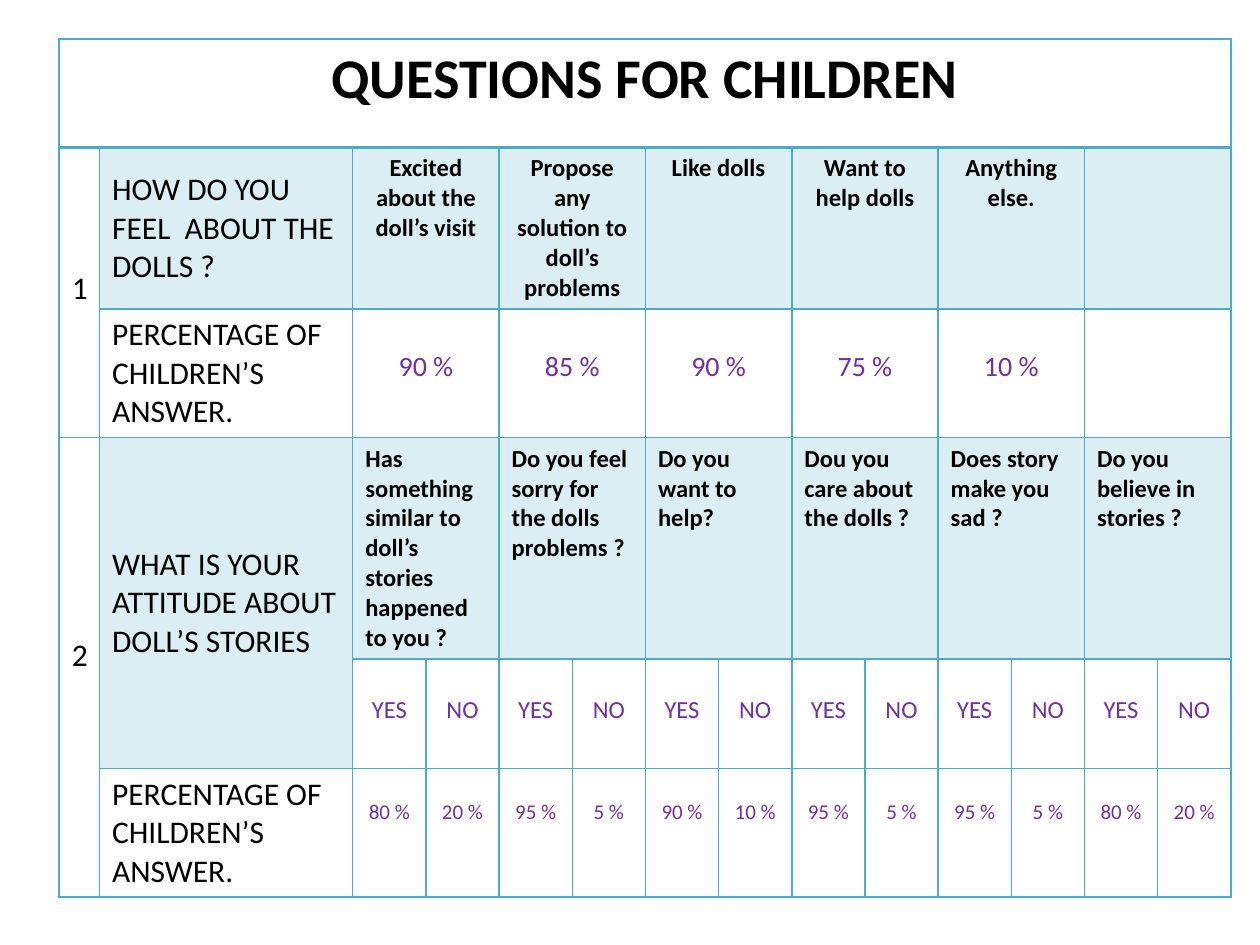
from dataclasses import dataclass

import pptx
import pptx.dml.color
import pptx.enum.text
import pptx.oxml
import pptx.oxml.ns
import pptx.util
from pptx.util import Inches

RGB = pptx.dml.color.RGBColor.from_string
CENTER = pptx.enum.text.PP_ALIGN.CENTER
LEFT = pptx.enum.text.PP_ALIGN.LEFT
TOP = pptx.enum.text.MSO_ANCHOR.TOP
MIDDLE = pptx.enum.text.MSO_ANCHOR.MIDDLE


@dataclass(frozen=True)
class Theme:
    font: str = "Calibri"
    ink: str = "000000"
    answer: str = "7030A0"
    border: str = "4BACC6"
    band: str = "DBEEF4"
    title_size: int = 32
    label_size: int = 18
    answer_size: int = 16
    option_size: int = 14
    share_size: int = 12
    line: float = 1
    heavy_line: float = 2


THEME = Theme()

PERCENTAGE_LABEL = "PERCENTAGE OF CHILDREN’S ANSWER."
FEELINGS = [
    ("Excited about the doll’s visit", "90 %"),
    ("Propose any solution to doll’s problems", "85 %"),
    ("Like dolls", "90 %"),
    ("Want to help dolls", "75 %"),
    ("Anything else.", "10 %"),
    ("", ""),
]
ATTITUDES = [
    ("Has something similar to doll’s stories happened to you ?", 80),
    ("Do you feel sorry for the dolls problems ?", 95),
    ("Do you want to help?", 90),
    ("Dou you care about the dolls ?", 95),
    ("Does story make you sad ?", 95),
    ("Do you believe in stories ?", 80),
]
NUMBER_WIDTH, LABEL_WIDTH = 0.32, 2.01
ROW_HEIGHTS = [0.86, 1.26, 1.02, 1.73, 0.87, 1.02]
FIRST_ANSWER = 2
COLUMNS = FIRST_ANSWER + 2 * len(FEELINGS)


def set_borders(cell, row):
    """Draw all four sides; the edge under the title row is heavier."""
    properties = cell._tc.get_or_add_tcPr()
    for side in "LRTB":
        under_title = (row, side) in ((0, "B"), (1, "T"))
        width = pptx.util.Pt(THEME.heavy_line if under_title else THEME.line)
        properties.append(pptx.oxml.parse_xml(
            f'<a:ln{side} {pptx.oxml.ns.nsdecls("a")} w="{width}"><a:solidFill>'
            f'<a:srgbClr val="{THEME.border}"/></a:solidFill></a:ln{side}>'))


def write(cell, text, size, color=THEME.ink, bold=False, align=LEFT,
          anchor=TOP, top=0.05):
    cell.vertical_anchor = anchor
    cell.margin_top = Inches(top)
    if not text:
        return
    paragraph = cell.text_frame.paragraphs[0]
    paragraph.alignment = align
    run = paragraph.add_run()
    run.text = text
    run.font.name = THEME.font
    run.font.size = pptx.util.Pt(size)
    run.font.bold = bold
    run.font.color.rgb = RGB(color)


def shade(cell):
    cell.fill.solid()
    cell.fill.fore_color.rgb = RGB(THEME.band)


def write_label(cell, text):
    write(cell, text, THEME.label_size, anchor=MIDDLE)


def merged(table, row, column, rows=1, columns=1):
    cell = table.cell(row, column)
    cell.merge(table.cell(row + rows - 1, column + columns - 1))
    return cell


def add_grid(slide, left, top, width):
    """Add the empty bordered table with two narrow columns per answer."""
    table = slide.shapes.add_table(
        len(ROW_HEIGHTS), COLUMNS, Inches(left), Inches(top),
        Inches(width), Inches(sum(ROW_HEIGHTS))).table
    table.first_row = table.horz_banding = False
    answer_width = (width - NUMBER_WIDTH - LABEL_WIDTH) / (COLUMNS - FIRST_ANSWER)
    for index, column in enumerate(table.columns):
        column.width = Inches(
            (NUMBER_WIDTH, LABEL_WIDTH)[index] if index < FIRST_ANSWER else answer_width)
    for index, height in enumerate(ROW_HEIGHTS):
        table.rows[index].height = Inches(height)
        for column in range(COLUMNS):
            cell = table.cell(index, column)
            set_borders(cell, index)
            cell.fill.background()
    return table


def fill_title(table):
    write(merged(table, 0, 0, columns=COLUMNS), "QUESTIONS FOR CHILDREN",
          THEME.title_size, bold=True, align=CENTER)


def fill_feelings(table, row):
    write(merged(table, row, 0, rows=2), "1", THEME.label_size, top=0.97)
    question = table.cell(row, 1)
    shade(question)
    write_label(question, "HOW DO YOU FEEL  ABOUT THE DOLLS ?")
    write_label(table.cell(row + 1, 1), PERCENTAGE_LABEL)
    for index, (feeling, share) in enumerate(FEELINGS):
        column = FIRST_ANSWER + 2 * index
        heading = merged(table, row, column, columns=2)
        shade(heading)
        write(heading, feeling, THEME.option_size, bold=True, align=CENTER)
        write(merged(table, row + 1, column, columns=2), share,
              THEME.answer_size, THEME.answer, align=CENTER, top=0.32)


def fill_attitudes(table, row):
    write(merged(table, row, 0, rows=3), "2", THEME.label_size, top=1.58)
    question = merged(table, row, 1, rows=2)
    shade(question)
    write_label(question, "WHAT IS YOUR ATTITUDE ABOUT DOLL’S STORIES")
    write_label(table.cell(row + 2, 1), PERCENTAGE_LABEL)
    for index, (attitude, yes_share) in enumerate(ATTITUDES):
        column = FIRST_ANSWER + 2 * index
        heading = merged(table, row, column, columns=2)
        shade(heading)
        write(heading, attitude, THEME.option_size, bold=True)
        for offset, (reply, share) in enumerate(
                [("YES", yes_share), ("NO", 100 - yes_share)]):
            write(table.cell(row + 1, column + offset), reply,
                  THEME.option_size, THEME.answer, align=CENTER, top=0.29)
            write(table.cell(row + 2, column + offset), f"{share} %",
                  THEME.share_size, THEME.answer, align=CENTER, top=0.25)


def add_questionnaire(slide, left, top, width):
    table = add_grid(slide, left, top, width)
    fill_title(table)
    fill_feelings(table, 1)
    fill_attitudes(table, 3)


def main():
    deck = pptx.Presentation()
    deck.slide_width, deck.slide_height = Inches(10), Inches(7.5)
    slide = deck.slides.add_slide(deck.slide_layouts[6])
    add_questionnaire(slide, 0.47, 0.31, 9.3)
    deck.save("out.pptx")


if __name__ == "__main__":
    main()
